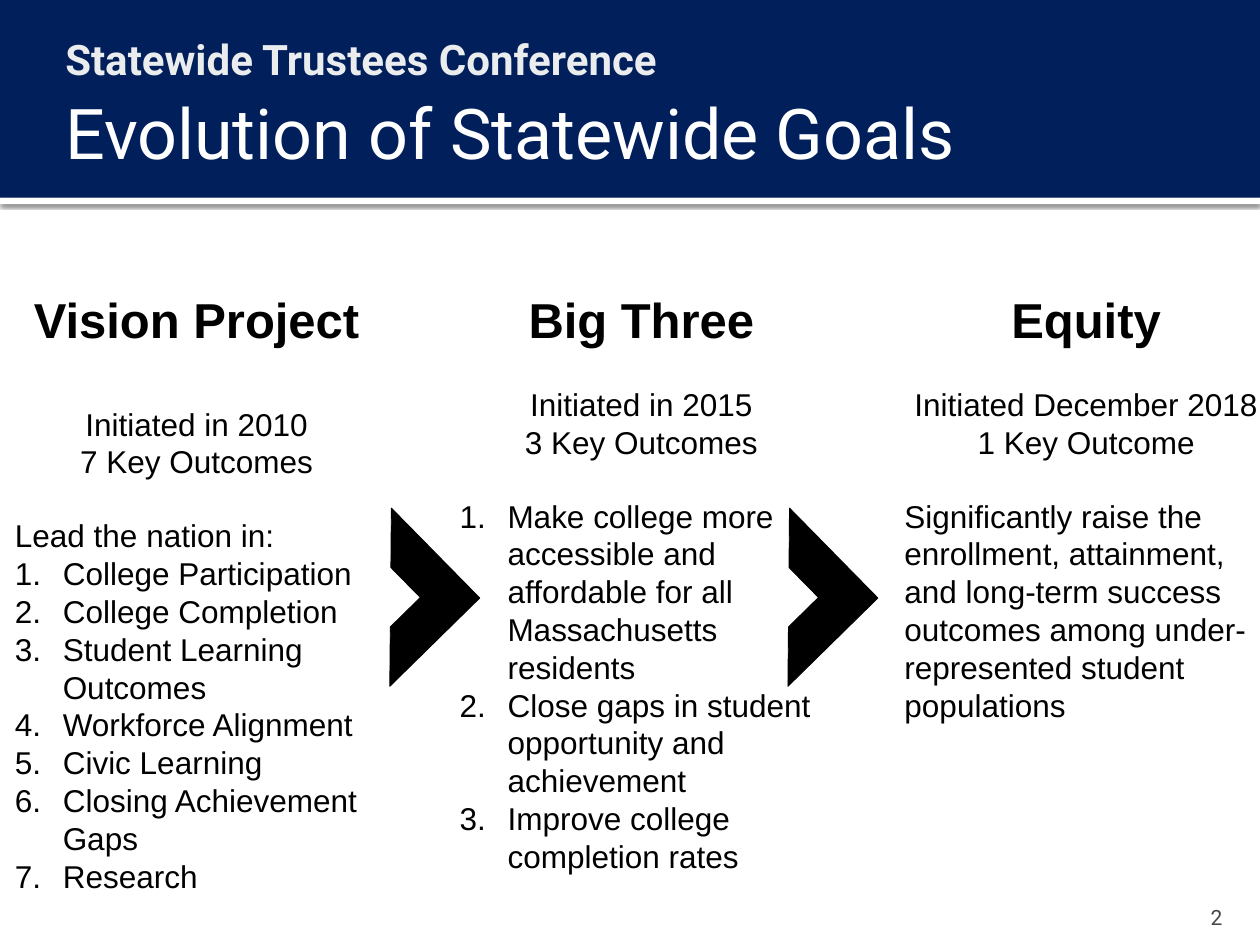
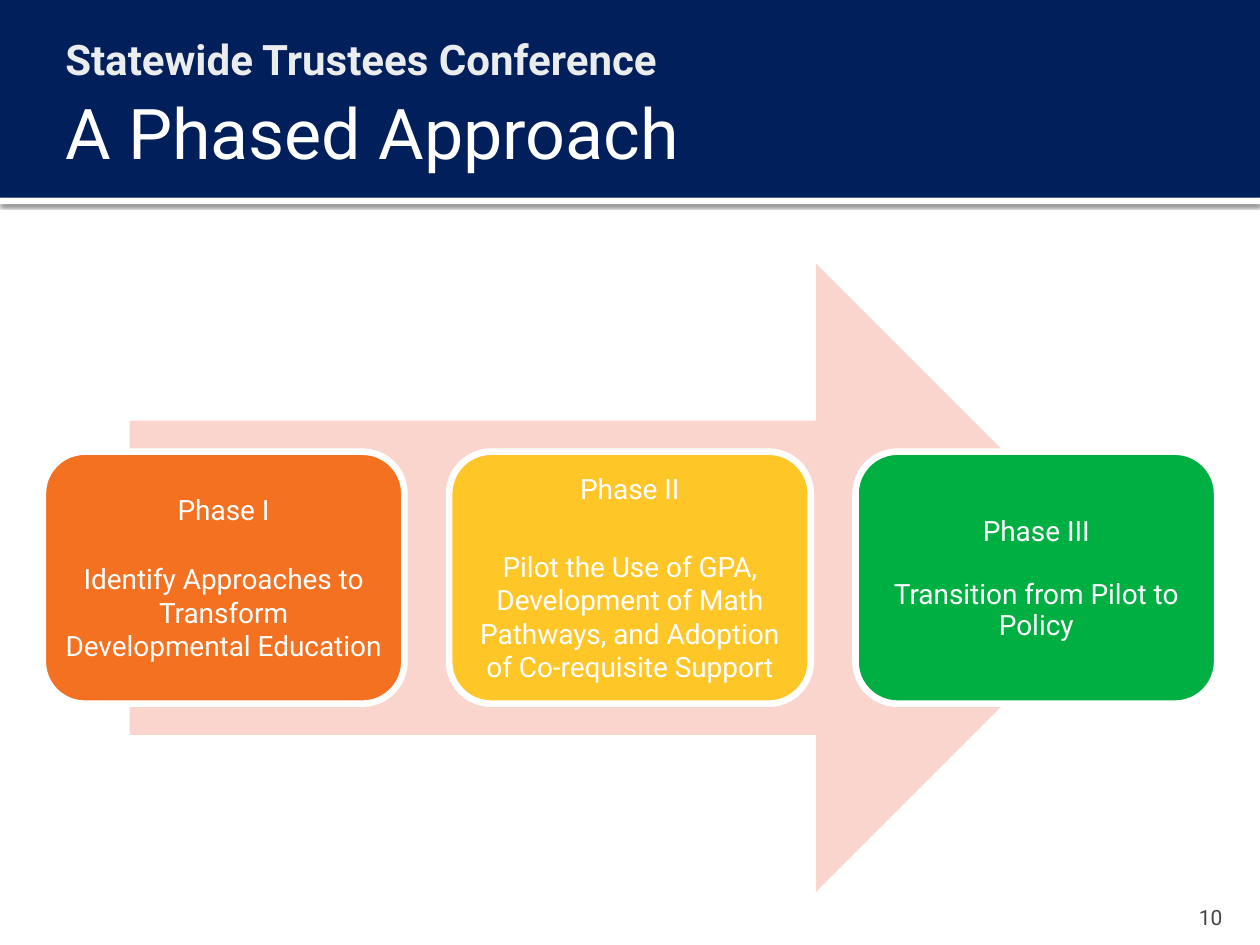
import pptx
import pptx.util
import pptx.dml.color
import pptx.enum.shapes
import pptx.enum.text
from lxml import etree
from pptx.oxml.ns import qn

Inches = pptx.util.Inches
Pt = pptx.util.Pt
SHAPE = pptx.enum.shapes.MSO_SHAPE
ALIGN = pptx.enum.text.PP_ALIGN
ANCHOR = pptx.enum.text.MSO_ANCHOR

NAVY, WHITE, BLACK = "001F5B", "FFFFFF", "000000"
PALE, GREY, PINK = "EAECEE", "454545", "FAD5CD"
ORANGE, YELLOW, GREEN = "F37121", "FFC627", "00AF41"
CONFERENCE = "Statewide Trustees Conference"

GOALS = [
    ("Vision Project", 32, ["Initiated in 2010", "7 Key Outcomes"], "Lead the nation in:",
     ["College Participation", "College Completion", "Student Learning Outcomes",
      "Workforce Alignment", "Civic Learning", "Closing Achievement Gaps", "Research"]),
    ("Big Three", 20.7, ["Initiated in 2015", "3 Key Outcomes"], None,
     ["Make college more accessible and affordable for all Massachusetts residents",
      "Close gaps in student opportunity and achievement",
      "Improve college completion rates"]),
    ("Equity", 20.7, ["Initiated December 2018", "1 Key Outcome"],
     "Significantly raise the enrollment, attainment, and long-term success "
     "outcomes among under-represented student populations", []),
]

PHASES = [
    ("Phase I", "Identify Approaches to Transform Developmental Education", ORANGE, 20, 1),
    ("Phase II", "Pilot the Use of GPA, Development of Math Pathways, "
     "and Adoption of Co-requisite Support", YELLOW, 25, 1),
    ("Phase III", "Transition from Pilot to Policy", GREEN, 19, 0.9),
]


def rgb(color):
    return pptx.dml.color.RGBColor.from_string(color)


def add_block(slide, kind, box, fill, line=None, weight=0.5):
    block = slide.shapes.add_shape(kind, *map(Inches, box))
    block.shadow.inherit = False
    block.fill.solid()
    block.fill.fore_color.rgb = rgb(fill)
    if line:
        block.line.color.rgb = rgb(line)
        block.line.width = Pt(weight)
    else:
        block.line.fill.background()
    return block


def set_frame(frame, insets=(0.1, 0.05, 0.1, 0.05), anchor=ANCHOR.TOP):
    frame.word_wrap = True
    frame.vertical_anchor = anchor
    (frame.margin_left, frame.margin_top,
     frame.margin_right, frame.margin_bottom) = map(Inches, insets)
    return frame


def add_frame(slide, box, **layout):
    return set_frame(slide.shapes.add_textbox(*map(Inches, box)).text_frame, **layout)


def write(frame, text, size=18, font="Arial", color=BLACK, bold=False, align=ALIGN.LEFT,
          before=0, spacing=None, numbered=False):
    paragraph = frame.paragraphs[0]
    if paragraph.runs:
        paragraph = frame.add_paragraph()
    paragraph.alignment = align
    paragraph.space_before = Pt(before)
    if spacing:
        paragraph.line_spacing = spacing
    if numbered:
        properties = paragraph._p.get_or_add_pPr()
        properties.set("marL", str(Inches(0.38)))
        properties.set("indent", str(-Inches(0.38)))
        etree.SubElement(properties, qn("a:buFont"), typeface="+mj-lt")
        etree.SubElement(properties, qn("a:buAutoNum"), type="arabicPeriod")
    run = paragraph.add_run()
    run.text = text
    run.font.size = Pt(size)
    run.font.name = font
    run.font.bold = bold
    run.font.color.rgb = rgb(color)


def add_soft_shadow(block):
    effects = block._element.spPr.find(qn("a:effectLst"))
    shadow = etree.SubElement(effects, qn("a:outerShdw"), blurRad=str(Pt(2.5)),
                              dist=str(Pt(0.8)), dir="5400000", rotWithShape="0")
    tint = etree.SubElement(shadow, qn("a:srgbClr"), val=BLACK)
    etree.SubElement(tint, qn("a:alpha"), val="60000")


def add_header(slide, box, title):
    left, top, width, height = box
    rule = add_block(slide, SHAPE.RECTANGLE, (left, top + height, width, 0.05), WHITE)
    add_soft_shadow(rule)
    add_block(slide, SHAPE.RECTANGLE, box, NAVY)
    conference = add_frame(slide, (left + 0.42, top + 0.17, width - 0.84, 0.5),
                           insets=(0.1, 0.1, 0.1, 0.05))
    write(conference, CONFERENCE, size=24, font="Roboto", color=PALE, bold=True)
    heading = add_frame(slide, (left + 0.42, top + 0.58, width - 0.84, 0.92),
                        anchor=ANCHOR.MIDDLE)
    write(heading, title, size=40, font="Roboto", color=WHITE)


def add_page_number(slide, box, number):
    frame = add_frame(slide, box, insets=(0.1, 0.05, 0.1, 0), anchor=ANCHOR.BOTTOM)
    write(frame, str(number), size=12, font="Roboto", color=GREY, align=ALIGN.RIGHT)


def add_goal(slide, box, name, gap, facts, statement, outcomes):
    frame = add_frame(slide, box)
    write(frame, name, size=28, bold=True, align=ALIGN.CENTER)
    for index, fact in enumerate(facts):
        write(frame, fact, align=ALIGN.CENTER, before=0 if index else gap)
    if statement:
        write(frame, statement, before=20.7)
    for index, outcome in enumerate(outcomes):
        write(frame, outcome, numbered=True, before=0 if index or statement else 20.7)


def add_goals(slide, box):
    left, top, width, height = box
    column_width, step = 3.08, 3.53
    for index, goal in enumerate(GOALS):
        add_goal(slide, (left + index * step, top, column_width, height), *goal)
    for index in range(len(GOALS) - 1):
        chevron = add_block(slide, SHAPE.HALF_FRAME,
                            (left + 2.58 + index * 3.16, top + 1.99, 1, 1), BLACK, BLACK)
        chevron.rotation = 135.5


def add_phase(slide, box, name, goal, color, gap, spacing):
    card = add_block(slide, SHAPE.ROUNDED_RECTANGLE, box, color, WHITE, 3.78)
    frame = set_frame(card.text_frame, insets=(0.07,) * 4, anchor=ANCHOR.MIDDLE)
    style = dict(size=16, font="Roboto", color=WHITE, align=ALIGN.CENTER)
    write(frame, name, **style)
    write(frame, goal, before=gap, spacing=spacing, **style)


def add_phases(slide, box):
    left, top, width, height = box
    add_block(slide, SHAPE.RIGHT_ARROW, (left + 0.69, top, width - 1.38, height), PINK)
    card_width, card_height = 2.87, 2
    step = (width - card_width) / (len(PHASES) - 1)
    card_top = top + (height - card_height) / 2
    for index, phase in enumerate(PHASES):
        add_phase(slide, (left + index * step, card_top, card_width, card_height), *phase)


def add_slide(deck, title, number, add_body, body_box):
    slide = deck.slides.add_slide(deck.slide_layouts[6])
    add_header(slide, (0, 0, 10, 1.57), title)
    add_page_number(slide, (9, 7.08, 0.8, 0.3), number)
    add_body(slide, body_box)


def main():
    deck = pptx.Presentation()
    deck.slide_width, deck.slide_height = Inches(10), Inches(7.5)
    add_slide(deck, "Evolution of Statewide Goals", 2, add_goals, (0.02, 2.25, 10.14, 4.98))
    add_slide(deck, "A Phased Approach", 10, add_phases, (0.34, 2.09, 9.32, 4.99))
    deck.save("out.pptx")


if __name__ == "__main__":
    main()
